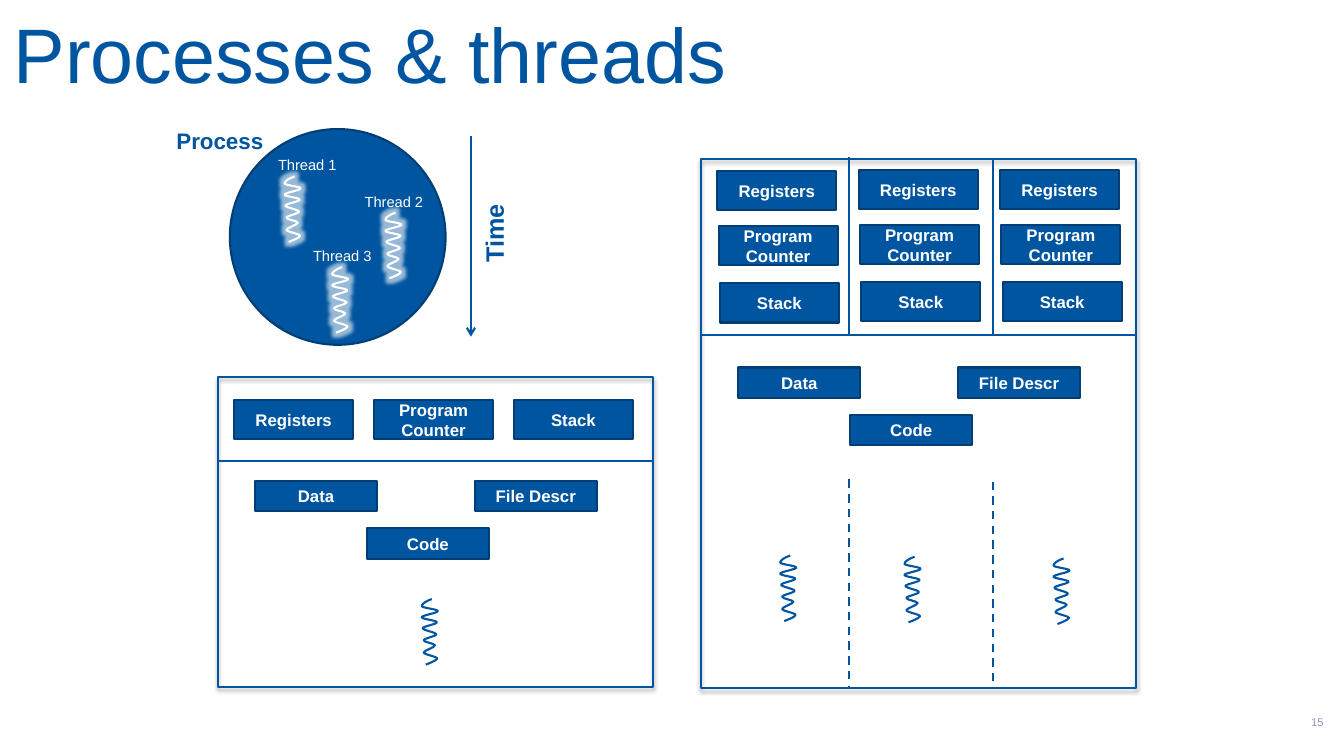
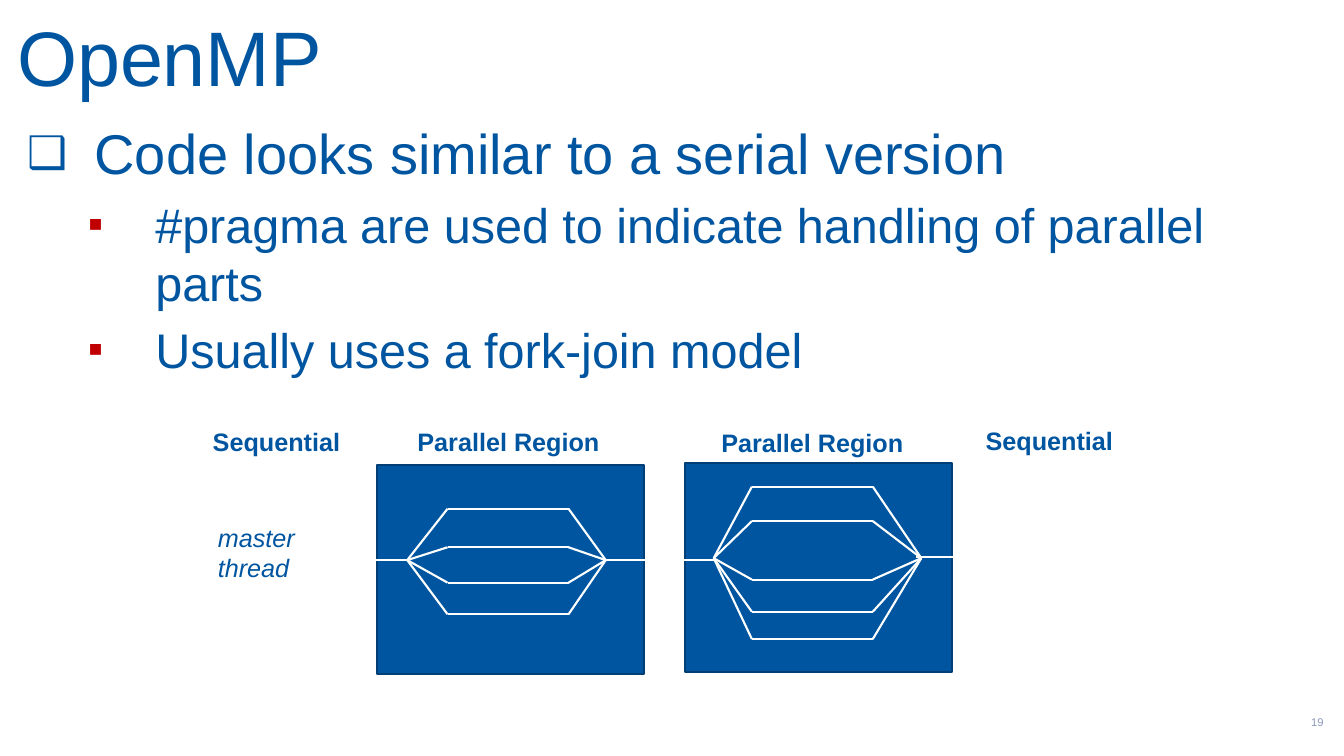
from dataclasses import dataclass
from typing import Optional

from lxml.etree import SubElement
from pptx import Presentation
from pptx.dml.color import RGBColor
from pptx.enum.dml import MSO_LINE
from pptx.enum.shapes import MSO_CONNECTOR, MSO_SHAPE
from pptx.enum.text import MSO_ANCHOR, PP_ALIGN
from pptx.oxml.ns import qn
from pptx.util import Pt


@dataclass(frozen=True)
class Theme:
    font: str = "Arial"
    blue: str = "0055A0"
    edge: str = "003F76"
    white: str = "FFFFFF"
    black: str = "000000"
    red: str = "C00000"
    grey: str = "8C99BE"
    title: float = 55.2
    body: float = 40
    sub_body: float = 34.7
    heading: float = 18
    process: float = 16
    block: float = 12
    thread: float = 10.5
    number: float = 8
    stroke: float = 1.5


THEME = Theme()


@dataclass(frozen=True)
class Box:
    left: float
    top: float
    width: float
    height: float

    def emu(self) -> tuple:
        return Pt(self.left), Pt(self.top), Pt(self.width), Pt(self.height)


@dataclass(frozen=True)
class Thread:
    label: str
    label_at: tuple
    coil_at: tuple


@dataclass(frozen=True)
class Bullet:
    text: str
    size: float
    indent: float
    mark: str
    mark_color: str
    mark_size: int


@dataclass(frozen=True)
class Region:
    box: Box
    heading: Box
    fork: tuple
    join: tuple
    lane_start: float
    lane_end: float
    lanes: tuple


# Shared drawing tools
def rgb(value: str) -> RGBColor:
    return RGBColor.from_string(value)


def write(frame, text: str, *, size: float, color: str = THEME.blue, bold: bool = False,
          italic: bool = False, align=PP_ALIGN.LEFT, anchor=MSO_ANCHOR.TOP,
          inset: Optional[float] = None, paragraph=None) -> None:
    """Put formatted text in a frame, or in one of its paragraphs."""
    frame.word_wrap = True
    frame.vertical_anchor = anchor
    if inset is not None:
        frame.margin_left = frame.margin_right = Pt(inset)
        frame.margin_top = frame.margin_bottom = Pt(inset)
    paragraph = paragraph or frame.paragraphs[0]
    paragraph.alignment = align
    run = paragraph.add_run()
    run.text = text
    font = run.font
    font.name, font.size, font.bold, font.italic = THEME.font, Pt(size), bold, italic
    font.color.rgb = rgb(color)


def add_label(slide, box: Box, text: str, rotation: float = 0, **text_format) -> None:
    label = slide.shapes.add_textbox(*box.emu())
    label.rotation = rotation
    write(label.text_frame, text, **text_format)


def add_effect(shape, tag: str, color: str, alpha: int, **attributes: str) -> None:
    effects = shape._element.spPr.find(qn("a:effectLst"))
    effect = SubElement(effects, qn(tag), attributes)
    tint = SubElement(effect, qn("a:srgbClr"), val=color)
    SubElement(tint, qn("a:alpha"), val=str(alpha * 1000))


def style(shape, fill: Optional[str], line: str) -> None:
    shape.shadow.inherit = False
    if fill:
        shape.fill.solid()
        shape.fill.fore_color.rgb = rgb(fill)
    else:
        shape.fill.background()
    shape.line.color.rgb = rgb(line)
    shape.line.width = Pt(THEME.stroke)


def add_solid(slide, box: Box, text: str = "", kind=MSO_SHAPE.RECTANGLE) -> None:
    solid = slide.shapes.add_shape(kind, *box.emu())
    style(solid, THEME.blue, THEME.edge)
    if text:
        write(solid.text_frame, text, size=THEME.block, color=THEME.white, bold=True,
              align=PP_ALIGN.CENTER, anchor=MSO_ANCHOR.MIDDLE)


def add_line(slide, start: tuple, end: tuple, color: str = THEME.blue,
             dashed: bool = False, arrow: bool = False) -> None:
    line = slide.shapes.add_connector(
        MSO_CONNECTOR.STRAIGHT, Pt(start[0]), Pt(start[1]), Pt(end[0]), Pt(end[1]))
    line.line.color.rgb = rgb(color)
    line.line.width = Pt(THEME.stroke)
    if dashed:
        line.line.dash_style = MSO_LINE.DASH
    properties = line._element.spPr
    if arrow:
        SubElement(properties.find(qn("a:ln")), qn("a:tailEnd"), type="arrow")
    SubElement(properties, qn("a:effectLst"))


def add_slide(deck, title: str, title_box: Box, number: int):
    slide = deck.slides.add_slide(deck.slide_layouts[6])
    add_label(slide, title_box, title, size=THEME.title, anchor=MSO_ANCHOR.MIDDLE, inset=3.6)
    add_label(slide, Box(900, 501.4, 52.6, 28.8), str(number), size=THEME.number,
              color=THEME.grey, align=PP_ALIGN.RIGHT, anchor=MSO_ANCHOR.MIDDLE)
    return slide


# Thread coil: turning points joined by smooth curves
COIL_TURNS = ((7.5, 0), (0.3, 5), (11.8, 8.6), (0.3, 13), (11.1, 16.6), (1, 20.9),
              (10.6, 25.2), (1.7, 29.5), (9.7, 33.1), (1.7, 38.2), (11.4, 42.5), (3.2, 46.8))
COIL_HANDLES = ((-4.3, 1.4),) + ((0, 1.4),) * (len(COIL_TURNS) - 2) + ((0, 0),)


def add_coil(slide, at: tuple, color: str = THEME.blue, glow: bool = False) -> None:
    turns = [(Pt(at[0] + x), Pt(at[1] + y)) for x, y in COIL_TURNS]
    handles = [(Pt(x), Pt(y)) for x, y in COIL_HANDLES]
    builder = slide.shapes.build_freeform(*turns[0])
    builder.add_line_segments(turns[1:], close=False)
    coil = builder.convert_to_shape()
    # Bend each straight segment into a cubic curve
    left, top = coil.left, coil.top
    segments = list(coil._element.spPr.iter(qn("a:lnTo")))
    for i, segment in enumerate(segments):
        (x0, y0), (x1, y1) = turns[i:i + 2]
        (leave_x, leave_y), (arrive_x, arrive_y) = handles[i:i + 2]
        curve = segment.makeelement(qn("a:cubicBezTo"))
        for x, y in ((x0 + leave_x, y0 + leave_y), (x1 - arrive_x, y1 - arrive_y), (x1, y1)):
            SubElement(curve, qn("a:pt"), x=str(x - left), y=str(y - top))
        segment.getparent().replace(segment, curve)
    style(coil, None, color)
    if glow:
        add_effect(coil, "a:glow", color, 60, rad=str(Pt(5)))


# Process diagrams
THREAD_STATE = ("Registers", "Program Counter", "Stack")


def add_process_frame(slide, box: Box, divider: float) -> None:
    frame = slide.shapes.add_shape(MSO_SHAPE.RECTANGLE, *box.emu())
    style(frame, None, THEME.blue)
    add_effect(frame, "a:outerShdw", THEME.black, 35, blurRad=str(Pt(3.1)),
               dist=str(Pt(1.8)), dir="5400000", rotWithShape="0")
    add_line(slide, (box.left, divider), (box.left + box.width, divider))


def add_state(slide, left: float, top: float, text: str) -> None:
    add_solid(slide, Box(left, top, 85, 28.1), text)


def add_shared_blocks(slide, left: float, top: float) -> None:
    for text, dx, dy in (("Data", 0, 0), ("Code", 79.9, 33.9), ("File Descr", 157, 0)):
        add_solid(slide, Box(left + dx, top + dy, 87.1, 21.8), text)


def build_processes(deck) -> None:
    slide = add_slide(deck, "Processes & threads", Box(6.1, 0.7, 944.6, 74.2), 15)

    # Process with its threads, along a time axis
    add_solid(slide, Box(164.2, 92.2, 154.1, 154.1), kind=MSO_SHAPE.OVAL)
    threads = (Thread("Thread 1", (191.5, 108), (203, 126)),
               Thread("Thread 2", (253.4, 133.9), (275, 151.9)),
               Thread("Thread 3", (216.5, 172.8), (236.9, 190.8)))
    for thread in threads:
        add_coil(slide, thread.coil_at, THEME.white, glow=True)
    for thread in threads:
        add_label(slide, Box(*thread.label_at, 68.4, 20.2), thread.label,
                  size=THEME.thread, color=THEME.white)
    add_label(slide, Box(118.9, 87.1, 102.2, 26.6), "Process", size=THEME.process, bold=True)
    add_line(slide, (336.4, 97.2), (336.4, 240.5), arrow=True)
    add_label(slide, Box(321.1, 148.7, 63.4, 28.8), "Time", rotation=270,
              size=THEME.heading, bold=True)

    # Process with one thread
    add_process_frame(slide, Box(155.5, 269.3, 311, 221.3), 329.5)
    for column, text in enumerate(THREAD_STATE):
        add_state(slide, 167.3 + 99.9 * column, 285.5, text)
    add_shared_blocks(slide, 182.2, 343.4)
    add_coil(slide, (301, 427.9))

    # Process with three threads
    add_process_frame(slide, Box(500.4, 113.6, 311, 377.8), 239.4)
    for column, drop in enumerate((0.8, 0, 0)):
        for row, (text, top) in enumerate(zip(THREAD_STATE, (121.4, 160.6, 201.5))):
            add_state(slide, 512.4 + 101 * column + 0.9 * row, top + drop, text)
    add_shared_blocks(slide, 527.4, 262.5)
    for x, shift in ((606.2, 0), (709.2, 1.5)):
        add_line(slide, (x, 112.3 + shift), (x, 238.3 + shift))
        add_line(slide, (x, 342.5 + shift), (x, 490.5 + shift), dashed=True)
    for coil_at in ((557, 396.8), (645.8, 397.7), (752.2, 398.9)):
        add_coil(slide, coil_at)


# Fork-join slide
def add_bullets(slide, box: Box, bullets: tuple) -> None:
    frame = slide.shapes.add_textbox(*box.emu()).text_frame
    for i, bullet in enumerate(bullets):
        paragraph = frame.add_paragraph() if i else frame.paragraphs[0]
        properties = paragraph._p.get_or_add_pPr()
        properties.set("marL", str(Pt(bullet.indent)))
        properties.set("indent", str(Pt(-48.2)))
        mark_color = SubElement(properties, qn("a:buClr"))
        SubElement(mark_color, qn("a:srgbClr"), val=bullet.mark_color)
        SubElement(properties, qn("a:buSzPct"), val=str(bullet.mark_size * 1000))
        SubElement(properties, qn("a:buFont"), typeface=THEME.font)
        SubElement(properties, qn("a:buChar"), char=bullet.mark)
        if i:
            paragraph.level = 1
            paragraph.space_before = Pt(6)
        write(frame, bullet.text, size=bullet.size, paragraph=paragraph)


def add_region(slide, region: Region) -> None:
    add_solid(slide, region.box)
    for y in region.lanes:
        stops = (region.fork, (region.lane_start, y), (region.lane_end, y), region.join)
        for start, end in zip(stops, stops[1:]):
            add_line(slide, start, end, THEME.white)
    add_label(slide, region.heading, "Parallel Region", size=THEME.heading, bold=True,
              align=PP_ALIGN.CENTER)


def build_openmp(deck) -> None:
    slide = add_slide(deck, "OpenMP", Box(8.6, 7.2, 943.2, 64.8), 19)
    sub_bullet = dict(size=THEME.sub_body, indent=95.2, mark="▪",
                      mark_color=THEME.red, mark_size=90)
    add_bullets(slide, Box(8.7, 81.4, 943.2, 401), (
        Bullet("Code looks similar to a serial version", THEME.body, 51.8, "❑", THEME.blue, 80),
        Bullet("#pragma are used to indicate handling of parallel parts", **sub_bullet),
        Bullet("Usually uses a fork-join model", **sub_bullet)))

    # Parallel regions
    for region in (
            Region(Box(269.3, 332.1, 190.8, 149.2), Box(267.8, 301, 190.8, 28.8),
                   (290.9, 400.1), (432.7, 400.1), 319.7, 406.1,
                   (363.4, 390.9, 416.2, 438.8)),
            Region(Box(489.4, 331, 190.8, 149), Box(484.8, 301.7, 190.8, 28.8),
                   (509.8, 398.7), (658.1, 398.7), 537.1, 623.4,
                   (347.6, 372.2, 414, 437, 456.5))):
        add_region(slide, region)

    # Master thread between the regions
    for left, right, y in ((213.8, 290.9, 400.1), (432.7, 509.8, 400.1), (654.5, 761, 398.1)):
        add_line(slide, (left, y), (right, y), THEME.white)
    for left, top in ((144.9, 301), (697, 300.2)):
        add_label(slide, Box(left, top, 130, 28.8), "Sequential", size=THEME.heading, bold=True)
    add_label(slide, Box(148.5, 369.4, 123.8, 51), "master thread",
              size=THEME.heading, italic=True)


def main() -> None:
    deck = Presentation()
    deck.slide_width, deck.slide_height = Pt(960), Pt(540)
    build_processes(deck)
    build_openmp(deck)
    deck.save("out.pptx")


if __name__ == "__main__":
    main()
